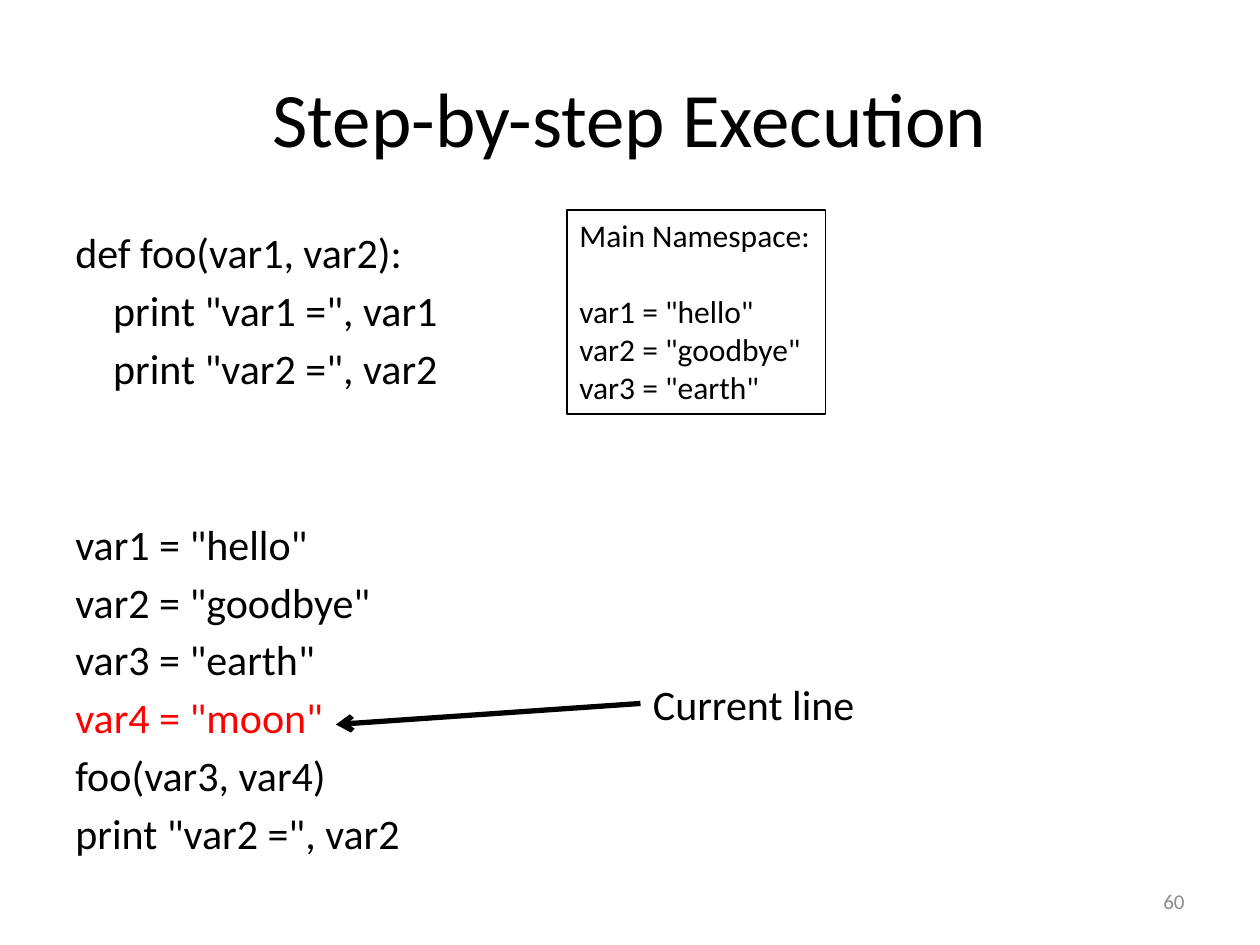
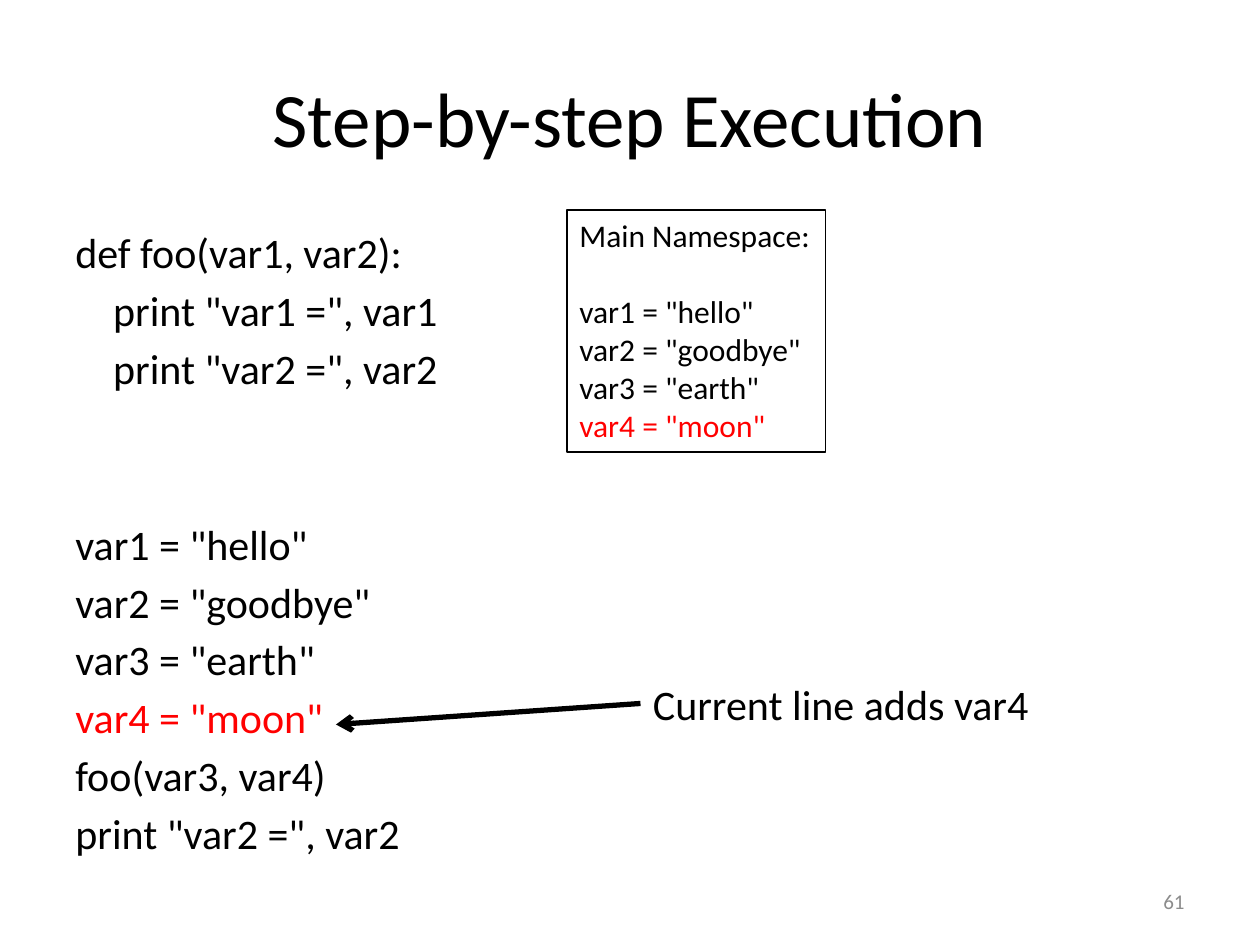
from dataclasses import dataclass

from lxml import etree
from pptx import Presentation
from pptx import util as u
from pptx.dml.color import RGBColor
from pptx.enum import shapes, text
from pptx.oxml import ns

COLORS = {"ink": "000000", "current": "FF0000", "page": "8C8C8C"}
FONT = "Calibri"
WIDTH, HEIGHT = u.Inches(10), u.Inches(7.5)
COLUMNS, ROWS = 120, 90
CODE_GAP, CODE_PITCH = 4.3, 33.6
NAMESPACE_PITCH = 22


@dataclass(frozen=True)
class Box:
    col: float
    row: float
    cols: float
    rows: float


@dataclass(frozen=True)
class Line:
    words: str
    color: str = "ink"
    indent: float = 0
    before: float = 0


@dataclass(frozen=True)
class Step:
    page: int
    note: str
    note_cols: float
    namespace: tuple[Line, ...]


TITLE = Box(6, 3.6, 108, 15)
CODE_BOX = Box(6, 21, 108, 59.4)
PAGE = Box(86, 83.4, 28, 4.8)
ARROW_TIP = (32, 69)

CURRENT = Line('var4 = "moon"', "current")
CODE = (
    Line("def foo(var1, var2):", before=CODE_GAP),
    Line('print "var1 =", var1', indent=3.6, before=CODE_GAP),
    Line('print "var2 =", var2', indent=3.6, before=CODE_GAP),
    Line('var1 = "hello"', before=CODE_GAP + 2 * CODE_PITCH),
    Line('var2 = "goodbye"', before=CODE_GAP),
    Line('var3 = "earth"', before=CODE_GAP),
    Line(CURRENT.words, CURRENT.color, before=CODE_GAP),
    Line("foo(var3, var4)", before=CODE_GAP),
    Line('print "var2 =", var2', before=CODE_GAP),
)
NAMESPACE = (
    Line("Main Namespace:"),
    Line('var1 = "hello"', before=NAMESPACE_PITCH),
    Line('var2 = "goodbye"'),
    Line('var3 = "earth"'),
)
STEPS = (
    Step(60, "Current line", 21.84, NAMESPACE),
    Step(61, "Current line adds var4", 38.52, NAMESPACE + (CURRENT,)),
)


def x(cols: float) -> int:
    return round(WIDTH * cols / COLUMNS)


def y(rows: float) -> int:
    return round(HEIGHT * rows / ROWS)


def place(box: Box) -> tuple[int, int, int, int]:
    return x(box.col), y(box.row), x(box.cols), y(box.rows)


def write(sp, lines, size, align=text.PP_ALIGN.LEFT, anchor=text.MSO_ANCHOR.TOP, wrap=True) -> None:
    tf = sp.text_frame
    tf.word_wrap = wrap
    tf.vertical_anchor = anchor
    for i, line in enumerate(lines):
        p = tf.add_paragraph() if i else tf.paragraphs[0]
        p.text = line.words
        p.alignment = align
        p.space_before = u.Pt(line.before)
        p.font.name, p.font.size = FONT, u.Pt(size)
        p.font.color.rgb = RGBColor.from_string(COLORS[line.color])
        if line.indent:
            p._p.get_or_add_pPr().set("marL", str(x(line.indent)))


def add_text(s, box: Box, lines, size, **layout):
    sp = s.shapes.add_textbox(*place(box))
    write(sp, lines, size, **layout)
    return sp


def add_namespace(s, lines: tuple[Line, ...]) -> None:
    box = Box(54, 20, 24.6, 1.44 + 3.6 * (len(lines) + 1))
    sp = s.shapes.add_shape(shapes.MSO_SHAPE.RECTANGLE, *place(box))
    sp.shadow.inherit = False
    sp.fill.background()
    sp.line.color.rgb = RGBColor.from_string(COLORS["ink"])
    sp.line.width = u.Pt(0.75)
    write(sp, lines, 18)


def add_arrow(s, label) -> None:
    tip = x(ARROW_TIP[0]), y(ARROW_TIP[1])
    cx = s.shapes.add_connector(shapes.MSO_CONNECTOR.STRAIGHT, *tip, *tip)
    cx.begin_connect(label, 1)
    cx.end_x, cx.end_y = tip
    cx.line.color.rgb = RGBColor.from_string(COLORS["ink"])
    cx.line.width = u.Pt(3)
    etree.SubElement(cx.line._get_or_add_ln(), ns.qn("a:tailEnd"), type="arrow")
    etree.SubElement(cx._element.spPr, ns.qn("a:effectLst"))


def add_step(prs, step: Step) -> None:
    s = prs.slides.add_slide(prs.slide_layouts[6])
    middle = text.MSO_ANCHOR.MIDDLE
    add_text(s, TITLE, [Line("Step-by-step Execution")], 44, align=text.PP_ALIGN.CENTER, anchor=middle)
    add_text(s, CODE_BOX, CODE, 24)
    add_text(s, PAGE, [Line(str(step.page), "page")], 12, align=text.PP_ALIGN.RIGHT, anchor=middle)
    label = add_text(s, Box(61, 64, step.note_cols, 6), [Line(step.note)], 24, wrap=False)
    add_namespace(s, step.namespace)
    add_arrow(s, label)


def main() -> None:
    prs = Presentation()
    prs.slide_width, prs.slide_height = WIDTH, HEIGHT
    for step in STEPS:
        add_step(prs, step)
    prs.save("out.pptx")


if __name__ == "__main__":
    main()
